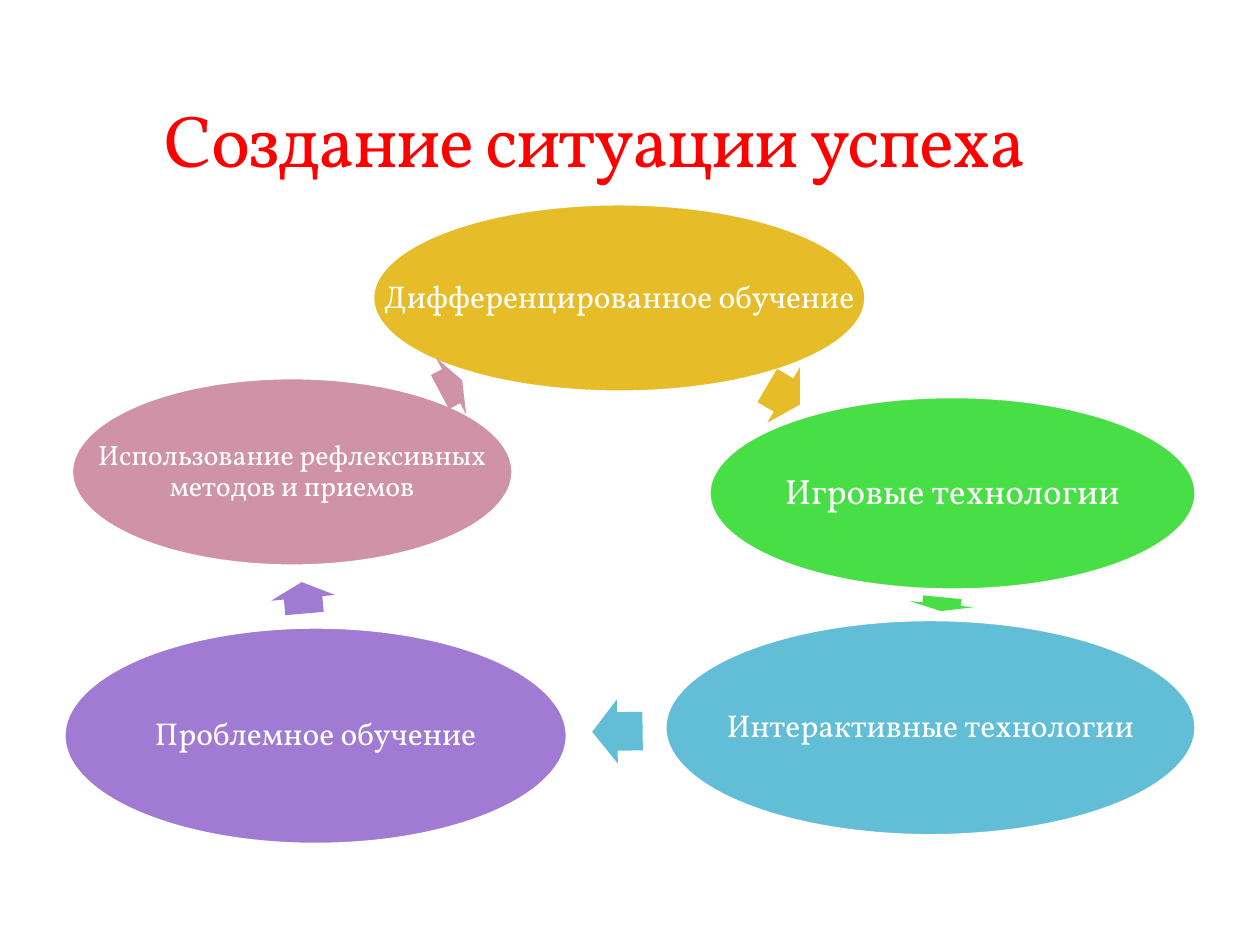
import pptx
import pptx.dml.color
import pptx.enum.shapes
import pptx.enum.text
import pptx.util

Pt = pptx.util.Pt
RGB = pptx.dml.color.RGBColor.from_string
KIND = pptx.enum.shapes.MSO_SHAPE
ALIGN = pptx.enum.text.PP_ALIGN
ANCHOR = pptx.enum.text.MSO_ANCHOR
FONT = "Vollkorn"
HUES = {
    "gold": "E7BC29",
    "green": "47DE46",
    "blue": "62BED7",
    "violet": "A17BD3",
    "pink": "D092A7",
    "white": "FFFFFF",
    "red": "FF0000",
}
STEPS = [
    ("gold", "Дифференцированное обучение", 18,
     (212.4, 115.9, 283, 108.7), (437, 207.4, 21.6, 30.4)),
    ("green", "Игровые технологии", 20,
     (404.6, 226.1, 279.4, 111.6), (534.2, 326.9, 7.9, 95.5)),
    ("blue", "Интерактивные технологии", 18,
     (379.4, 353.5, 304.6, 124.6), (338.4, 399.6, 28.8, 179.2)),
    ("violet", "Проблемное обучение", 18,
     (36, 357.8, 288.7, 125.3), (164.2, 323.3, 18, 264.9)),
    ("pink", "Использование рефлексивных\vметодов и приемов", 16,
     (40.3, 215.3, 253.4, 108.7), (250.6, 202.3, 14.4, 332)),
]
DEPTH = 36.7


def assign(item, values):
    for name, value in values.items():
        setattr(item, name, value)


def style(part, size, hue):
    assign(part.font, {"name": FONT, "size": Pt(size), "bold": False})
    part.font.color.rgb = RGB(HUES[hue])


def add_form(slide, kind, box, hue):
    form = slide.shapes.add_shape(kind, *map(Pt, box))
    form.shadow.inherit = False
    form.fill.solid()
    form.fill.fore_color.rgb = RGB(HUES[hue])
    return form


def add_oval(slide, hue, text, size, box):
    oval = add_form(slide, KIND.OVAL, box, hue)
    oval.line.color.rgb = RGB(HUES["white"])
    oval.line.width = Pt(3)
    frame = oval.text_frame
    sides = ("left", "top", "right", "bottom")
    assign(frame, {f"margin_{side}": Pt(2) for side in sides})
    assign(frame, {"word_wrap": False, "vertical_anchor": ANCHOR.MIDDLE})
    frame.text = text
    para = frame.paragraphs[0]
    assign(para, {"alignment": ALIGN.CENTER, "line_spacing": 0.9})
    for run in para.runs:
        style(run, size, "white")


def add_arrow(slide, hue, left, top, width, angle):
    arrow = add_form(slide, KIND.RIGHT_ARROW, (left, top, width, DEPTH), hue)
    arrow.line.fill.background()
    arrow.rotation = angle
    arrow.adjustments[0] = 0.6
    arrow.adjustments[1] = 0.5


def set_title(slide, text):
    title = slide.shapes.title
    assign(title, {"left": Pt(36), "top": Pt(12.2),
                   "width": Pt(648), "height": Pt(95.8)})
    frame = title.text_frame
    assign(frame, {"vertical_anchor": ANCHOR.BOTTOM, "word_wrap": True,
                   "auto_size": pptx.enum.text.MSO_AUTO_SIZE.NONE})
    frame.text = text
    para = frame.paragraphs[0]
    para.alignment = ALIGN.LEFT
    props = para._p.get_or_add_pPr()
    props.set("marL", str(Pt(51)))
    props.set("indent", "0")
    run = para.runs[0]
    style(run, 42, "red")
    run._r.get_or_add_rPr().set("spc", "-100")


def main():
    deck = pptx.Presentation()
    assign(deck, {"slide_width": Pt(720), "slide_height": Pt(540)})
    slide = deck.slides.add_slide(deck.slide_layouts[5])
    for hue, text, size, box, arrow in STEPS:
        add_oval(slide, hue, text, size, box)
        add_arrow(slide, hue, *arrow)
    set_title(slide, "Создание ситуации успеха")
    deck.save("out.pptx")


if __name__ == "__main__":
    main()
